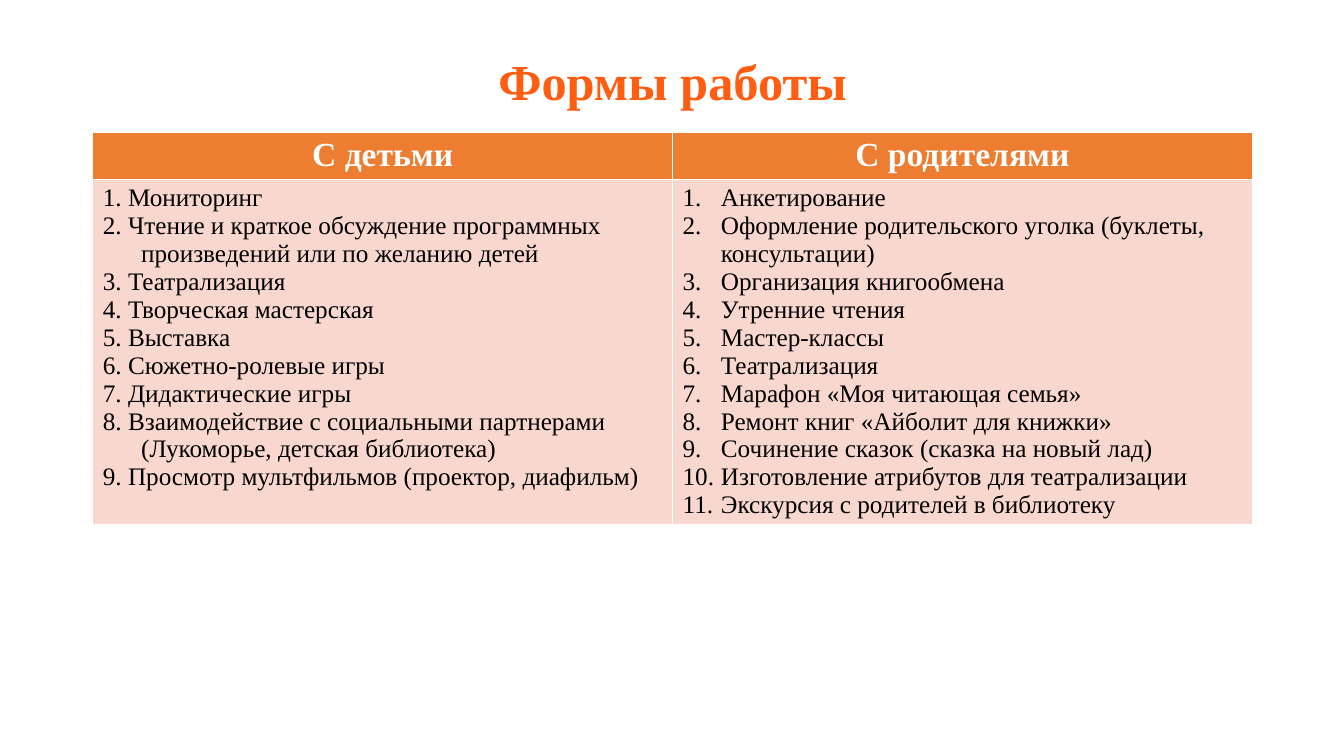
from lxml import etree
from pptx import Presentation
from pptx.dml.color import RGBColor
from pptx.enum.text import MSO_ANCHOR, PP_ALIGN
from pptx.oxml.ns import qn
from pptx.util import Inches, Pt

CENTER = PP_ALIGN.CENTER
MIDDLE = MSO_ANCHOR.MIDDLE
TITLE_ORANGE = RGBColor(0xFF, 0x5D, 0x12)
HEADER_ORANGE = RGBColor(0xED, 0x7D, 0x31)
BODY_PINK = RGBColor(0xF8, 0xD7, 0xCE)
WHITE = RGBColor(0xFF, 0xFF, 0xFF)
BLACK = RGBColor(0, 0, 0)
FONT = "Times New Roman"

LEFT, WIDTH = Inches(0.92), Inches(11.5)
HEADER_HEIGHT, BODY_HEIGHT = Inches(0.46), Inches(3.42)
HANGING = Inches(0.38)

CHILDREN = [
    "Мониторинг",
    "Чтение и краткое обсуждение программных произведений или по желанию детей",
    "Театрализация",
    "Творческая мастерская",
    "Выставка",
    "Сюжетно-ролевые игры",
    "Дидактические игры",
    "Взаимодействие с социальными партнерами (Лукоморье, детская библиотека)",
    "Просмотр мультфильмов (проектор, диафильм)",
]
PARENTS = [
    "Анкетирование",
    "Оформление родительского уголка (буклеты, консультации)",
    "Организация книгообмена",
    "Утренние чтения",
    "Мастер-классы",
    "Театрализация",
    "Марафон «Моя читающая семья»",
    "Ремонт книг «Айболит для книжки»",
    "Сочинение сказок (сказка на новый лад)",
    "Изготовление атрибутов для театрализации",
    "Экскурсия с родителей в библиотеку",
]
# Heading, lines, whether the numbers are automatic
COLUMNS = [
    ("С детьми", [f"{n}. {form}" for n, form in enumerate(CHILDREN, 1)], False),
    ("С родителями", PARENTS, True),
]


def style_runs(paragraph, size, color, bold):
    for run in paragraph.runs:
        run.font.name = FONT
        run.font.size = Pt(size)
        run.font.bold = bold
        run.font.color.rgb = color


def fill_cell(cell, color):
    cell.fill.solid()
    cell.fill.fore_color.rgb = color


prs = Presentation()
prs.slide_width, prs.slide_height = Inches(13.33), Inches(7.5)
slide = prs.slides.add_slide(prs.slide_layouts[5])

# Title
title = slide.shapes.title
title.left, title.top, title.width, title.height = LEFT, Inches(0.4), WIDTH, Inches(0.88)
title.text_frame.text = "Формы работы"
title.text_frame.vertical_anchor = MIDDLE
heading = title.text_frame.paragraphs[0]
heading.alignment = CENTER
heading.line_spacing = 0.9
style_runs(heading, 36, TITLE_ORANGE, True)

# Table of the forms of work
forms = slide.shapes.add_table(
    2, len(COLUMNS), LEFT, Inches(1.31), WIDTH, HEADER_HEIGHT + BODY_HEIGHT).table
forms.horz_banding = False
forms.rows[0].height, forms.rows[1].height = HEADER_HEIGHT, BODY_HEIGHT

for column, (audience, lines, numbered) in enumerate(COLUMNS):
    # Column heading
    header = forms.cell(0, column)
    fill_cell(header, HEADER_ORANGE)
    header.text_frame.text = audience
    header.text_frame.paragraphs[0].alignment = CENTER
    style_runs(header.text_frame.paragraphs[0], 24, WHITE, True)

    # List with hanging numbers
    body = forms.cell(1, column)
    fill_cell(body, BODY_PINK)
    body.text_frame.text = "\n".join(lines)
    for item in body.text_frame.paragraphs:
        properties = item._p.get_or_add_pPr()
        properties.set("marL", str(HANGING))
        properties.set("indent", str(-HANGING))
        if numbered:
            etree.SubElement(properties, qn("a:buFont"), typeface="+mj-lt")
            etree.SubElement(properties, qn("a:buAutoNum"), type="arabicPeriod")
        style_runs(item, 18, BLACK, False)

prs.save("out.pptx")
